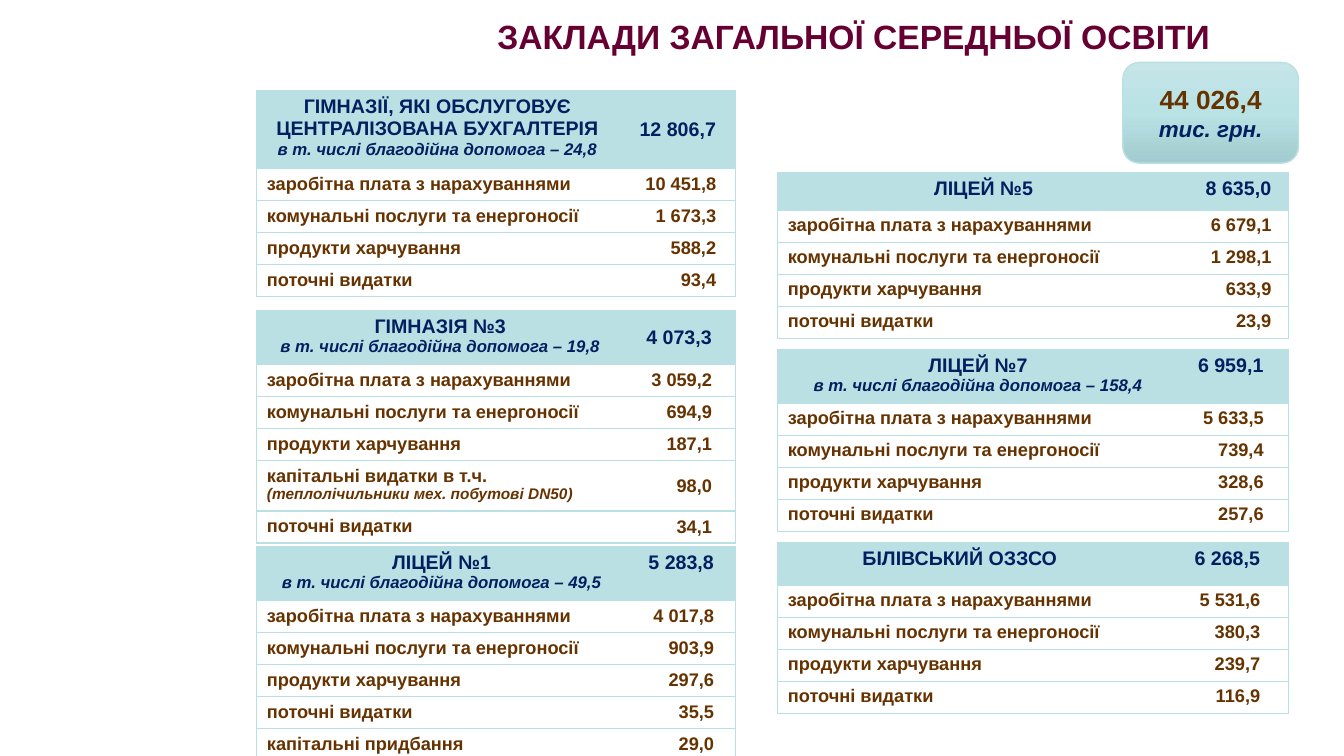
import copy
import lxml.etree
import pptx
import pptx.util
import pptx.dml.color
import pptx.enum.shapes
import pptx.enum.text
import pptx.oxml.ns

Pt = pptx.util.Pt
Align = pptx.enum.text.PP_ALIGN
Anchor = pptx.enum.text.MSO_ANCHOR
qn = pptx.oxml.ns.qn

HUES = {"title": "660033", "navy": "002060", "brown": "663300", "teal": "BBE0E3",
        "light": "C5E5E8", "mid": "B9E2E5", "dark": "A1CBCE"}
FORMS = {  # size, colour, italic
    "title": (24, "title", False), "total": (18.7, "brown", False),
    "unit": (16, "navy", True), "head": (14, "navy", False),
    "gift": (12, "navy", True), "item": (13, "brown", False),
    "note": (11, "brown", True)}


def put(frame, lines, align):
    """Write (text, form) lines as the paragraphs of a frame."""
    for i, (text, form) in enumerate(lines):
        para = frame.paragraphs[0] if i == 0 else frame.add_paragraph()
        para.alignment = align
        run = para.add_run()
        run.text = text
        size, hue, slant = FORMS[form]
        look = {"name": "Arial", "size": Pt(size), "bold": True, "italic": slant}
        for key, val in look.items():
            setattr(run.font, key, val)
        run.font.color.rgb = pptx.dml.color.RGBColor.from_string(HUES[hue])


def edge(cell, sides):
    """Rule the named sides of a cell and clear the others."""
    props = cell._tc.get_or_add_tcPr()
    for i, side in enumerate("LRTB"):
        line = lxml.etree.Element(qn("a:ln" + side), w="12700")
        if side in sides:
            fill = lxml.etree.SubElement(line, qn("a:solidFill"))
            lxml.etree.SubElement(fill, qn("a:srgbClr"), val=HUES["teal"])
        else:
            lxml.etree.SubElement(line, qn("a:noFill"))
        props.insert(i, line)


deck = pptx.Presentation()
deck.slide_width, deck.slide_height = Pt(960), Pt(540)
slide = deck.slides.add_slide(deck.slide_layouts[6])

# Title
box = slide.shapes.add_textbox(Pt(274.3), Pt(8), Pt(671), Pt(36.4))
box.text_frame.word_wrap = True
put(box.text_frame, [("ЗАКЛАДИ ЗАГАЛЬНОЇ СЕРЕДНЬОЇ ОСВІТИ", "title")], Align.CENTER)

# Badge with the total
badge = slide.shapes.add_shape(pptx.enum.shapes.MSO_SHAPE.ROUNDED_RECTANGLE,
                               Pt(802), Pt(44.6), Pt(125.5), Pt(72))
badge.shadow.inherit = False
badge.line.color.rgb = pptx.dml.color.RGBColor.from_string(HUES["teal"])
badge.line.width = Pt(1)
badge.fill.gradient()
badge.fill.gradient_angle = 270
first = badge.fill._fill._gradFill.gsLst[0]
first.addnext(copy.deepcopy(first))
for stop, hue, pos in zip(badge.fill.gradient_stops, ("light", "mid", "dark"), (0, 0.5, 1)):
    stop.color.rgb = pptx.dml.color.RGBColor.from_string(HUES[hue])
    stop.position = pos
badge.text_frame.vertical_anchor = Anchor.MIDDLE
put(badge.text_frame, [("44 026,4", "total"), ("тис. грн.", "unit")], Align.CENTER)

# Budget tables
PAY, POWER, FOOD, OTHER = ("заробітна плата з нарахуваннями",
                           "комунальні послуги та енергоносії",
                           "продукти харчування", "поточні видатки")
BASE = (PAY, POWER, FOOD, OTHER)
METERS = "капітальні видатки в т.ч.\n(теплолічильники мех. побутові DN50)"
GIFT = "в т. числі благодійна допомога – "
LEFT, RIGHT = (183.5, 342), (555.6, 365)  # left edge and width of each column
ROW, TALL = 22.85, 36

# column, top, head height, value width, value inset, anchor, names, gift, items, sums
TABLES = [
    (LEFT, 65, 55.4, 84, 14, Anchor.MIDDLE,
     ["ГІМНАЗІЇ, ЯКІ ОБСЛУГОВУЄ", "ЦЕНТРАЛІЗОВАНА БУХГАЛТЕРІЯ"], "24,8", BASE,
     ["12 806,7", "10 451,8", "1 673,3", "588,2", "93,4"]),
    (LEFT, 221.8, 38.6, 80, 17, Anchor.MIDDLE, ["ГІМНАЗІЯ №3"], "19,8",
     (PAY, POWER, FOOD, METERS, OTHER),
     ["4 073,3", "3 059,2", "694,9", "187,1", "98,0", "34,1"]),
    (LEFT, 390.4, 38.6, 78, 15.5, Anchor.TOP, ["ЛІЦЕЙ №1"], "49,5",
     BASE + ("капітальні придбання",),
     ["5 283,8", "4 017,8", "903,9", "297,6", "35,5", "29,0"]),
    (RIGHT, 123.2, 27, 71, 12.5, Anchor.TOP, ["ЛІЦЕЙ №5"], None, BASE,
     ["8 635,0", "6 679,1", "1 298,1", "633,9", "23,9"]),
    (RIGHT, 249.6, 38.6, 79, 18, Anchor.TOP, ["ЛІЦЕЙ №7"], "158,4", BASE,
     ["6 959,1", "5 633,5", "739,4", "328,6", "257,6"]),
    (RIGHT, 387.5, 30.7, 105, 20.5, Anchor.TOP, ["БІЛІВСЬКИЙ ОЗЗСО"], None, BASE,
     ["6 268,5", "5 531,6", "380,3", "239,7", "116,9"]),
]

for (left, width), top, high, slim, inset, anchor, names, gift, items, sums in TABLES:
    # Text of every row
    head = [(name, "head") for name in names]
    if gift:
        head.append((GIFT + gift, "gift"))
    rows = [head] + [list(zip(item.split("\n"), ("item", "note"))) for item in items]
    sizes = [high] + [TALL if len(lines) > 1 else ROW for lines in rows[1:]]

    # Grid
    grid = slide.shapes.add_table(len(rows), 2, Pt(left), Pt(top),
                                  Pt(width), Pt(sum(sizes))).table
    for key in ("first_row", "horz_banding"):
        setattr(grid, key, False)
    grid.columns[0].width, grid.columns[1].width = Pt(width - slim), Pt(slim)

    # Cells
    for r, (lines, size, value) in enumerate(zip(rows, sizes, sums)):
        grid.rows[r].height = Pt(size)
        label, money = grid.cell(r, 0), grid.cell(r, 1)
        for cell, sides in ((label, "LTB"), (money, "RTB")):
            if r == 0:
                cell.fill.solid()
                cell.fill.fore_color.rgb = pptx.dml.color.RGBColor.from_string(HUES["teal"])
            else:
                cell.fill.background()
            edge(cell, sides)
        put(label.text_frame, lines, Align.LEFT if r else Align.CENTER)
        money.margin_left, money.margin_right = Pt(0), Pt(inset)
        money.vertical_anchor = anchor
        put(money.text_frame, [(value, "item" if r else "head")], Align.RIGHT)

deck.save("out.pptx")
